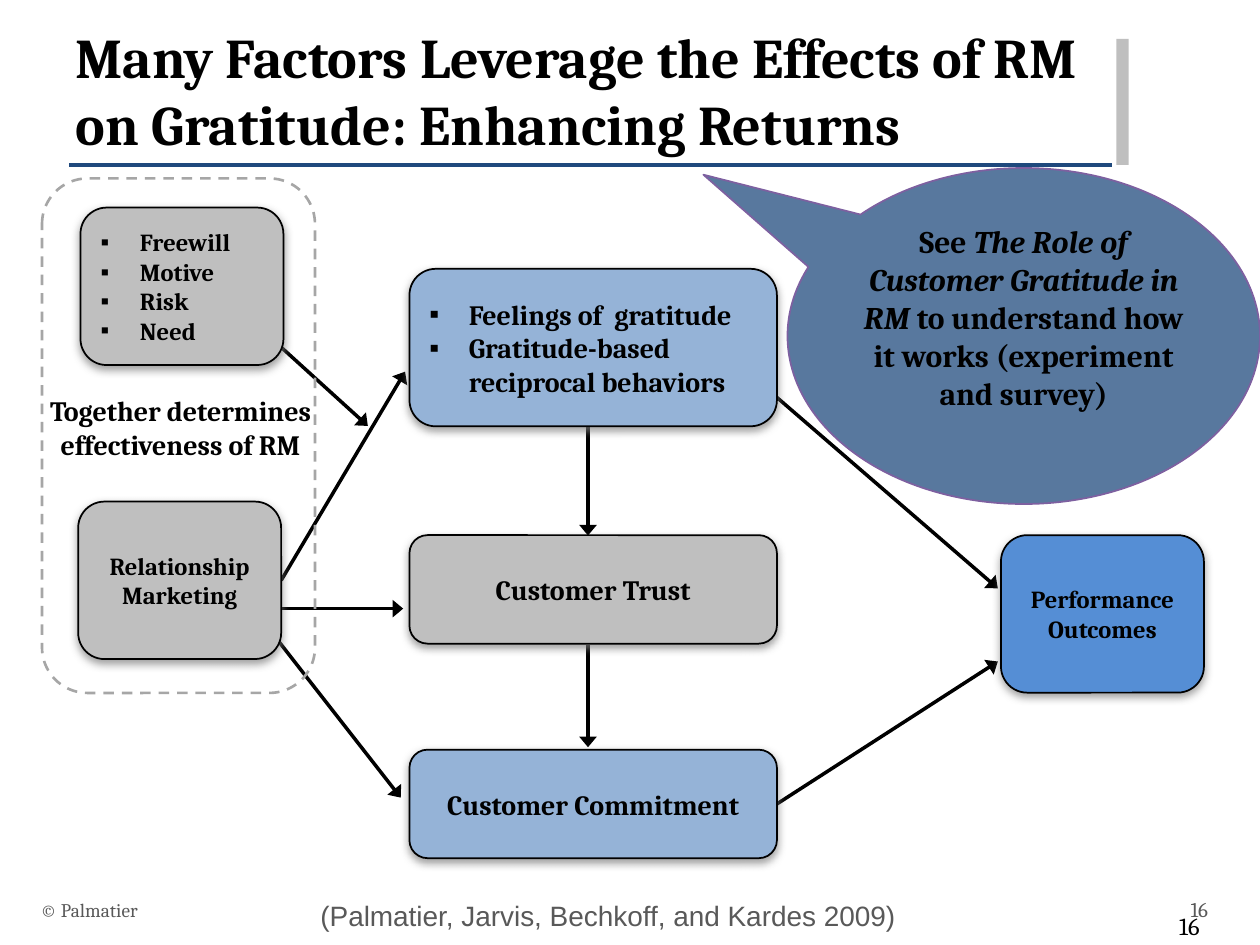
"""Build a slide showing how gratitude leverages relationship marketing."""
from dataclasses import dataclass

from lxml.etree import SubElement
from pptx import Presentation
from pptx.dml.color import RGBColor
from pptx.enum.dml import MSO_LINE
from pptx.enum.shapes import MSO_CONNECTOR, MSO_SHAPE
from pptx.enum.text import MSO_ANCHOR, MSO_AUTO_SIZE, PP_ALIGN
from pptx.oxml.ns import qn
from pptx.util import Pt


@dataclass(frozen=True)
class Theme:
    black: RGBColor = RGBColor(0x00, 0x00, 0x00)
    navy: RGBColor = RGBColor(0x1F, 0x49, 0x7D)
    blue: RGBColor = RGBColor(0x55, 0x8E, 0xD5)
    light_blue: RGBColor = RGBColor(0x95, 0xB3, 0xD7)
    purple: RGBColor = RGBColor(0x7D, 0x60, 0xA0)
    gray: RGBColor = RGBColor(0xBF, 0xBF, 0xBF)
    dash_gray: RGBColor = RGBColor(0xA6, 0xA6, 0xA6)
    text_gray: RGBColor = RGBColor(0x59, 0x59, 0x59)
    serif: str = "Cambria"
    sans: str = "Arial"
    title: int = 32
    callout: int = 18
    large: int = 16
    medium: int = 14
    page: int = 12
    small: int = 11


theme = Theme()


def write(shape, lines, size, color=theme.black, bold=True, align=PP_ALIGN.LEFT,
          anchor=MSO_ANCHOR.MIDDLE, font=theme.serif, bullet=None):
    frame = shape.text_frame
    frame.word_wrap = True
    frame.auto_size = MSO_AUTO_SIZE.NONE
    frame.vertical_anchor = anchor
    for index, runs in enumerate(lines):
        paragraph = frame.add_paragraph() if index else frame.paragraphs[0]
        paragraph.alignment = align
        if bullet:
            properties = paragraph._p.get_or_add_pPr()
            properties.set("marL", str(Pt(22.5)))
            properties.set("indent", str(-Pt(22.5)))
            SubElement(properties, qn("a:buFont"), typeface=theme.sans)
            SubElement(properties, qn("a:buChar"), char=bullet)
        paragraph.font.name = font
        paragraph.font.size = Pt(size)
        paragraph.font.bold = bold
        paragraph.font.color.rgb = color
        for text, italic in [(runs, None)] if isinstance(runs, str) else runs:
            run = paragraph.add_run()
            run.text = text
            run.font.italic = italic


def add_line(shapes, start, end, color=theme.black, arrow=True):
    line = shapes.add_connector(MSO_CONNECTOR.STRAIGHT, *map(Pt, start + end))
    line.line.color.rgb = color
    line.line.width = Pt(2)
    if arrow:
        SubElement(line.line._get_or_add_ln(), qn("a:tailEnd"), type="triangle", w="lg", len="med")
    SubElement(line._element.spPr, qn("a:effectLst"))
    return line


presentation = Presentation()
presentation.slide_width, presentation.slide_height = Pt(720), Pt(540)
slide = presentation.slides.add_slide(presentation.slide_layouts[5])
shapes = slide.shapes

title = shapes.title
title.left, title.top, title.width, title.height = Pt(36), Pt(6.3), Pt(589.7), Pt(90)
write(title, ["Many Factors Leverage the Effects of RM on Gratitude: Enhancing Returns"], theme.title)

add_line(shapes, (39.6, 94.3), (635.3, 94.3), theme.navy, arrow=False)
accent = shapes.add_shape(MSO_SHAPE.RECTANGLE, Pt(638), Pt(22.3), Pt(7), Pt(72))
accent.shadow.inherit = False
accent.fill.solid()
accent.fill.fore_color.rgb = theme.gray
accent.line.fill.background()

for start, end in [
    ((157, 363.6), (229, 455.8)),
    ((437.8, 221.8), (570.2, 336.2)),
    ((136, 347.8), (230.4, 347.8)),
    ((157, 195.1), (210.2, 243.4)),
    ((336, 242), (336, 306)),
    ((336, 368.6), (336, 427)),
]:
    add_line(shapes, start, end)
marketing_to_gratitude = add_line(shapes, (160.6, 331.6), (231.5, 212.4))
commitment_to_outcomes = add_line(shapes, (444.2, 459.4), (570.2, 378))

group_outline = shapes.add_shape(MSO_SHAPE.ROUNDED_RECTANGLE, Pt(24), Pt(102), Pt(156), Pt(294))
group_outline.shadow.inherit = False
group_outline.fill.background()
group_outline.line.color.rgb = theme.dash_gray
group_outline.line.width = Pt(1.5)
group_outline.line.dash_style = MSO_LINE.DASH

left, center, right = PP_ALIGN.LEFT, PP_ALIGN.CENTER, PP_ALIGN.RIGHT
middle, top = MSO_ANCHOR.MIDDLE, MSO_ANCHOR.TOP

callout = shapes.add_shape(MSO_SHAPE.OVAL_CALLOUT, Pt(450), Pt(96), Pt(270), Pt(192))
callout.adjustments[0], callout.adjustments[1] = -0.678, -0.48
callout.shadow.inherit = False
callout.fill.solid()
callout.fill.fore_color.rgb = theme.navy
SubElement(callout._element.spPr.find(qn("a:solidFill"))[0], qn("a:alpha"), val="74000")
callout.line.color.rgb = theme.purple
callout.line.width = Pt(1)
frame = callout.text_frame
frame.margin_left = frame.margin_right = frame.margin_top = frame.margin_bottom = Pt(3)
callout_runs = [
    ("See ", False),
    ("The Role of Customer Gratitude in RM ", True),
    ("to understand how it works (experiment and survey)", False),
]
write(callout, [callout_runs], theme.callout, align=center, anchor=top)

for text, position, size, color, bold, align, anchor, font in [
    ("Together determines effectiveness of RM", (13.2, 221.5, 180, 46),
     theme.large, theme.black, True, center, top, theme.serif),
    ("(Palmatier, Jarvis, Bechkoff, and Kardes 2009)", (176, 509.8, 355.7, 26.6),
     theme.large, theme.text_gray, False, left, top, theme.sans),
    ("© Palmatier", (16, 505.4, 482, 28.8),
     theme.small, theme.text_gray, False, left, middle, theme.serif),
    ("16", (653.5, 505.4, 43.9, 28.8),
     theme.page, theme.text_gray, False, right, middle, theme.serif),
    ("16", (642.2, 518.4, 50.4, 21.6),
     theme.medium, theme.black, False, right, middle, theme.serif),
]:
    write(shapes.add_textbox(*map(Pt, position)), [text], size, color, bold, align, anchor, font)

boxes = []
for lines, position, fill, size, bullet in [
    (["Freewill", "Motive", "Risk", "Need"],
     (46, 118.6, 116, 90), theme.gray, theme.medium, "▪"),
    (["Relationship Marketing"],
     (44.7, 286.6, 116, 90), theme.gray, theme.medium, None),
    (["Feelings of  gratitude", "Gratitude-based reciprocal behaviors"],
     (234, 153.6, 210, 90), theme.light_blue, theme.large, "▪"),
    (["Customer Trust"],
     (234, 305.8, 210, 62), theme.gray, theme.large, None),
    (["Customer Commitment"],
     (234, 428.4, 210, 62), theme.light_blue, theme.large, None),
    (["Performance Outcomes"],
     (572, 305.8, 116, 90), theme.blue, theme.medium, None),
]:
    box = shapes.add_shape(MSO_SHAPE.ROUNDED_RECTANGLE, *map(Pt, position))
    box.fill.solid()
    box.fill.fore_color.rgb = fill
    box.line.color.rgb = theme.black
    box.line.width = Pt(1)
    box.shadow.inherit = False
    shadow = SubElement(box._element.spPr.find(qn("a:effectLst")), qn("a:outerShdw"),
                        blurRad=str(Pt(5)), dist=str(Pt(2)), dir="5400000", rotWithShape="0")
    shade = SubElement(shadow, qn("a:srgbClr"), val="808080")
    SubElement(shade, qn("a:alpha"), val="75000")
    write(box, lines, size, align=left if bullet else center, bullet=bullet)
    boxes.append(box)

factors, marketing, gratitude, trust, commitment, outcomes = boxes
marketing_to_gratitude.begin_connect(marketing, 3)
commitment_to_outcomes.begin_connect(commitment, 3)

presentation.save("out.pptx")
